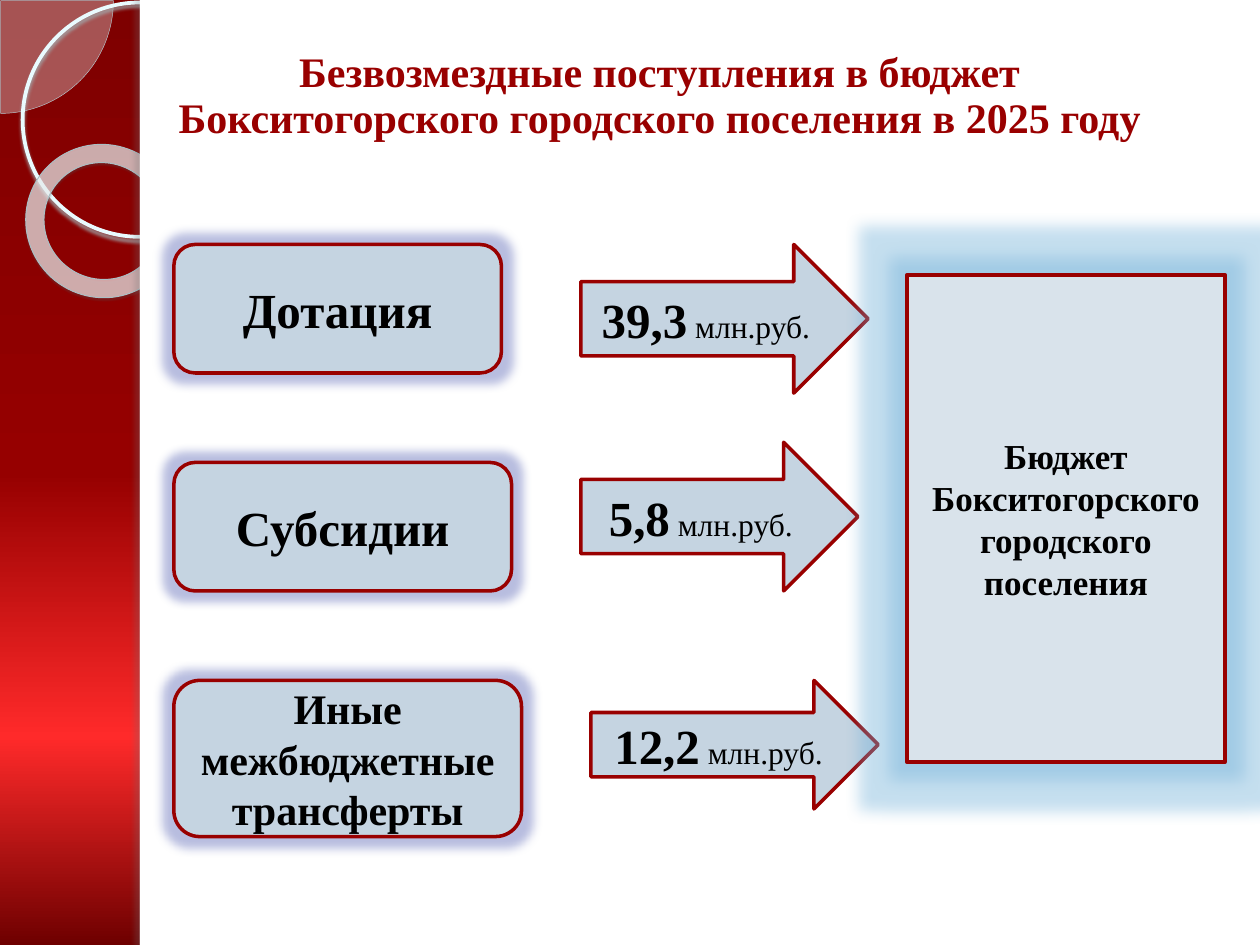
from dataclasses import dataclass

from lxml import etree
from pptx import Presentation, util as u
from pptx.dml.color import RGBColor
from pptx.enum import shapes, text
from pptx.oxml.ns import qn


@dataclass(frozen=True)
class Theme:
    """Colours and type sizes of the slide."""
    font: str = "Times New Roman"
    accent: str = "990000"
    ink: str = "000000"
    white: str = "FFFFFF"
    panel: str = "C5D4E1"
    target: str = "D9E3EB"
    violet_glow: str = "4E5BB0"
    blue_glow: str = "6FAFD8"
    backdrop: tuple = ((0, "7E0000", 100), (50, "960000", 96),
                       (78, "FF2A2A", 100), (100, "6E0000", 100))
    large: int = 28
    title: int = 24
    body: int = 20
    unit: int = 18


THEME = Theme()
KIND = shapes.MSO_SHAPE


def apply(target, values):
    """Set every attribute in a dict of format values."""
    for name, value in values.items():
        setattr(target, name, value)


def add_node(parent, tag, **values):
    """Append a drawing element with the given attributes."""
    return etree.SubElement(parent, qn(tag), {key: str(value) for key, value in values.items()})


def add_color(parent, color, alpha=100):
    """Append a colour with an opacity in percent."""
    node = add_node(parent, "a:srgbClr", val=color)
    if alpha < 100:
        add_node(node, "a:alpha", val=alpha * 1000)


def add_form(page, kind, place, fill=None, alpha=100, line=None, adjust=(), turn=0):
    """Add a preset shape with plain fill and outline."""
    box = page.shapes.add_shape(kind, *map(u.Inches, place))
    box.shadow.inherit = False
    box.rotation = turn
    for index, value in enumerate(adjust):
        box.adjustments[index] = value
    if fill:
        box.fill.solid()
        box.fill.fore_color.rgb = RGBColor.from_string(fill)
        if alpha < 100:
            color = box.fill._xPr.find(qn("a:solidFill"))[0]
            add_node(color, "a:alpha", val=alpha * 1000)
    else:
        box.fill.background()
    if line:
        box.line.color.rgb = RGBColor.from_string(line[0])
        box.line.width = u.Pt(line[1])
    else:
        box.line.fill.background()
    return box


def add_effect(box, tag, color, alpha, **values):
    """Add a glow or a shadow to a shape."""
    effects = box._element.spPr.find(qn("a:effectLst"))
    add_color(add_node(effects, tag, **values), color, alpha)


def add_shadow(box, color, alpha, blur, distance, angle):
    """Add an outer shadow measured in points and degrees."""
    add_effect(box, "a:outerShdw", color, alpha, blurRad=u.Pt(blur),
               dist=u.Pt(distance), dir=angle * 60000, rotWithShape=0)


def write(box, spans, color=THEME.ink, anchor=text.MSO_ANCHOR.MIDDLE, spacing=None):
    """Write one centred paragraph of (text, size, bold) spans."""
    apply(box.text_frame, {"word_wrap": True, "vertical_anchor": anchor})
    para = box.text_frame.paragraphs[0]
    apply(para, {"alignment": text.PP_ALIGN.CENTER, "line_spacing": spacing})
    for words, size, bold in spans:
        span = para.add_run()
        span.text = words
        apply(span.font, {"name": THEME.font, "size": u.Pt(size), "bold": bold})
        span.font.color.rgb = RGBColor.from_string(color)


def paint_backdrop(page):
    """Fill the page with the vertical red gradient."""
    fill = page.background.fill
    fill.gradient()
    fill.gradient_angle = 270
    stops = page.element.find(".//" + qn("a:gsLst"))
    for stop in list(stops):
        stops.remove(stop)
    for position, color, alpha in THEME.backdrop:
        add_color(add_node(stops, "a:gs", pos=position * 1000), color, alpha)


def add_ornaments(page):
    """Draw the rings on the side band and the white panel."""
    add_form(page, KIND.PIE, (-0.89, -0.89, 1.79, 1.79), "F8FCFD", 33,
             ("B7CBD1", 0.25), (0, 54))
    ring = add_form(page, KIND.OVAL, (0.18, 0.02, 1.86, 1.86), line=("E9FAFE", 2.15))
    add_shadow(ring, "A1AEB1", 85, 2, 2, 90)
    donut = add_form(page, KIND.DONUT, (0.2, 1.15, 1.23, 1.21), "F9FDFE", 65,
                     ("AABFC4", 0.58), (0.12,), 38.6)
    add_shadow(donut, "4E5759", 35, 1, 1.2, 75)
    add_form(page, KIND.RECTANGLE, (1.11, 0, 8.89, 7.5), THEME.white)
    edge = add_form(page, KIND.RECTANGLE, (1.11, 0, 0.08, 7.5), THEME.white)
    add_shadow(edge, "6D7476", 25, 3, 3, 180)


def add_title(page, words):
    """Add the slide title."""
    box = page.shapes.add_textbox(*map(u.Inches, (1.14, 0.36, 8.19, 0.83)))
    write(box, [(words, THEME.title, True)], THEME.accent, text.MSO_ANCHOR.TOP, 0.9)


def add_source(page, place, words, size):
    """Add a rounded box naming a source of income."""
    box = add_form(page, KIND.ROUNDED_RECTANGLE, place, THEME.panel, line=(THEME.accent, 2))
    add_effect(box, "a:glow", THEME.violet_glow, 40, rad=u.Pt(11))
    write(box, [(words, size, True)])


def add_amount(page, place, amount):
    """Add an arrow with an amount in millions."""
    box = add_form(page, KIND.RIGHT_ARROW, place, THEME.panel, line=(THEME.accent, 2))
    write(box, [(amount, THEME.large, True), (" млн.руб.", THEME.unit, False)])


def add_target(page, words):
    """Add the tall box that receives the income."""
    box = add_form(page, KIND.RECTANGLE, (7.2, 2.18, 2.52, 3.87), THEME.target,
                   line=(THEME.accent, 2.25))
    add_effect(box, "a:glow", THEME.blue_glow, 40, rad=u.Pt(18))
    write(box, [(words, THEME.body, True)])


def main():
    """Build the slide and save it."""
    deck = Presentation()
    apply(deck, {"slide_width": u.Inches(10), "slide_height": u.Inches(7.5)})
    page = deck.slides.add_slide(deck.slide_layouts[6])
    paint_backdrop(page)
    add_ornaments(page)
    add_title(page, "Безвозмездные поступления в бюджет "
                    "Бокситогорского городского поселения в 2025 году")
    sources = (
        ("Дотация", THEME.large, 2.6, 1.02),
        ("Субсидии", THEME.large, 2.68, 1.02),
        ("Иные межбюджетные трансферты", THEME.title, 2.76, 1.24),
    )
    for row, (words, size, width, height) in enumerate(sources):
        add_source(page, (1.38, 1.94 + 1.73 * row, width, height), words, size)
    amounts = (
        ("39,3", (4.61, 1.94, 2.28, 1.18)),
        ("5,8", (4.61, 3.51, 2.2, 1.18)),
        ("12,2", (4.69, 5.4, 2.28, 1.02)),
    )
    for amount, place in amounts:
        add_amount(page, place, amount)
    add_target(page, "Бюджет Бокситогорского городского поселения")
    deck.save("out.pptx")


if __name__ == "__main__":
    main()
